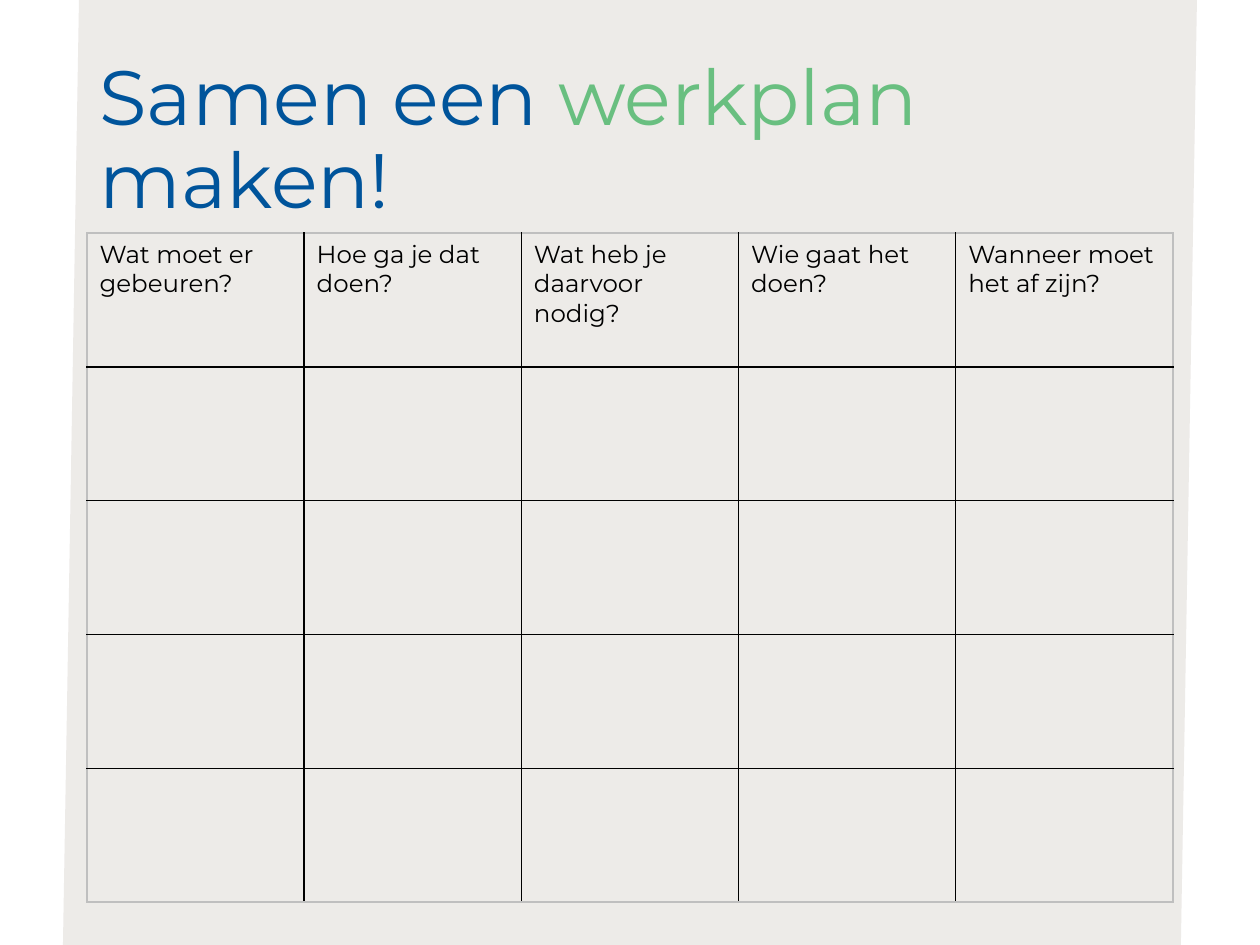
import pptx
import pptx.util
import pptx.dml.color
import pptx.enum.shapes
import pptx.enum.text
import pptx.oxml.ns
import lxml.etree
from dataclasses import dataclass

WIDE, HIGH = 10, 7.5
HEADS = (
    "Wat moet er gebeuren?",
    "Hoe ga je dat doen?",
    "Wat heb je daarvoor nodig?",
    "Wie gaat het doen?",
    "Wanneer moet het af zijn?",
)
TITLE = (("Samen een ", "blue"), ("werkplan", "green"), (" maken!", "blue"))
ROWS = 5


@dataclass(frozen=True)
class Theme:
    """Hold the colours, font and sizes of the slide."""
    font: str = "Montserrat"
    blue: str = "00549B"
    green: str = "69BF80"
    sand: str = "EDEBE8"
    ink: str = "000000"
    edge: str = "BFBFBF"
    big: int = 44
    small: int = 14
    line: int = 1


THEME = Theme()


def scale(left, top, width, height):
    """Turn shares of the slide into a box of lengths."""
    return [pptx.util.Inches(share * side)
            for share, side in zip((left, top, width, height), (WIDE, HIGH) * 2)]


def apply(item, form):
    """Set each attribute named in a dict of format values."""
    for name, value in form.items():
        setattr(item, name, value)


def write(para, text, size, tone):
    """Add one styled run to a paragraph."""
    run = para.add_run()
    run.text = text
    apply(run.font, {"name": THEME.font, "size": pptx.util.Pt(size)})
    run.font.color.rgb = pptx.dml.color.RGBColor.from_string(tone)


def border(cell, side, tone):
    """Draw one side of a table cell."""
    tag = pptx.oxml.ns.qn
    line = lxml.etree.SubElement(cell._tc.get_or_add_tcPr(), tag("a:ln" + side),
                                 w=str(pptx.util.Pt(THEME.line)))
    fill = lxml.etree.SubElement(line, tag("a:solidFill"))
    lxml.etree.SubElement(fill, tag("a:srgbClr"), val=tone)


def panel(slide, box):
    """Place the slanted backdrop in its box."""
    shape = slide.shapes.add_shape(
        pptx.enum.shapes.MSO_SHAPE.PARALLELOGRAM, *box)
    shape.adjustments[0] = 0.017
    shape.shadow.inherit = False
    shape.fill.solid()
    shape.fill.fore_color.rgb = pptx.dml.color.RGBColor.from_string(THEME.sand)
    shape.line.fill.background()


def title(slide, box):
    """Place the two-colour title in its box."""
    frame = slide.shapes.add_textbox(*box).text_frame
    apply(frame, {"word_wrap": True,
                  "vertical_anchor": pptx.enum.text.MSO_ANCHOR.MIDDLE})
    para = frame.paragraphs[0]
    para.line_spacing = 0.9
    for text, tone in TITLE:
        write(para, text, THEME.big, getattr(THEME, tone))


def plan(slide, box):
    """Place the work plan table in its box."""
    cols = len(HEADS)
    table = slide.shapes.add_table(ROWS, cols, *box).table
    apply(table, {"first_row": False, "horz_banding": False})
    for row in range(ROWS):
        for col in range(cols):
            cell = table.cell(row, col)
            outer = {"L": col == 0, "R": col == cols - 1,
                     "T": row == 0, "B": row == ROWS - 1}
            for side, rim in outer.items():
                border(cell, side, THEME.edge if rim else THEME.ink)
            cell.fill.background()
    for col, head in enumerate(HEADS):
        write(table.cell(0, col).text_frame.paragraphs[0],
              head, THEME.small, THEME.ink)


def main():
    """Build the slide and save it."""
    deck = pptx.Presentation()
    apply(deck, {"slide_width": pptx.util.Inches(WIDE),
                 "slide_height": pptx.util.Inches(HIGH)})
    slide = deck.slides.add_slide(deck.slide_layouts[6])
    panel(slide, scale(0.05, 0, 0.9, 1))
    left, width = 0.069, 0.862
    top, split, base = 0.4 / HIGH, 1.85 / HIGH, 7.16 / HIGH
    title(slide, scale(left, top, width, split - top))
    plan(slide, scale(left, split, width, base - split))
    deck.save("out.pptx")


if __name__ == "__main__":
    main()
